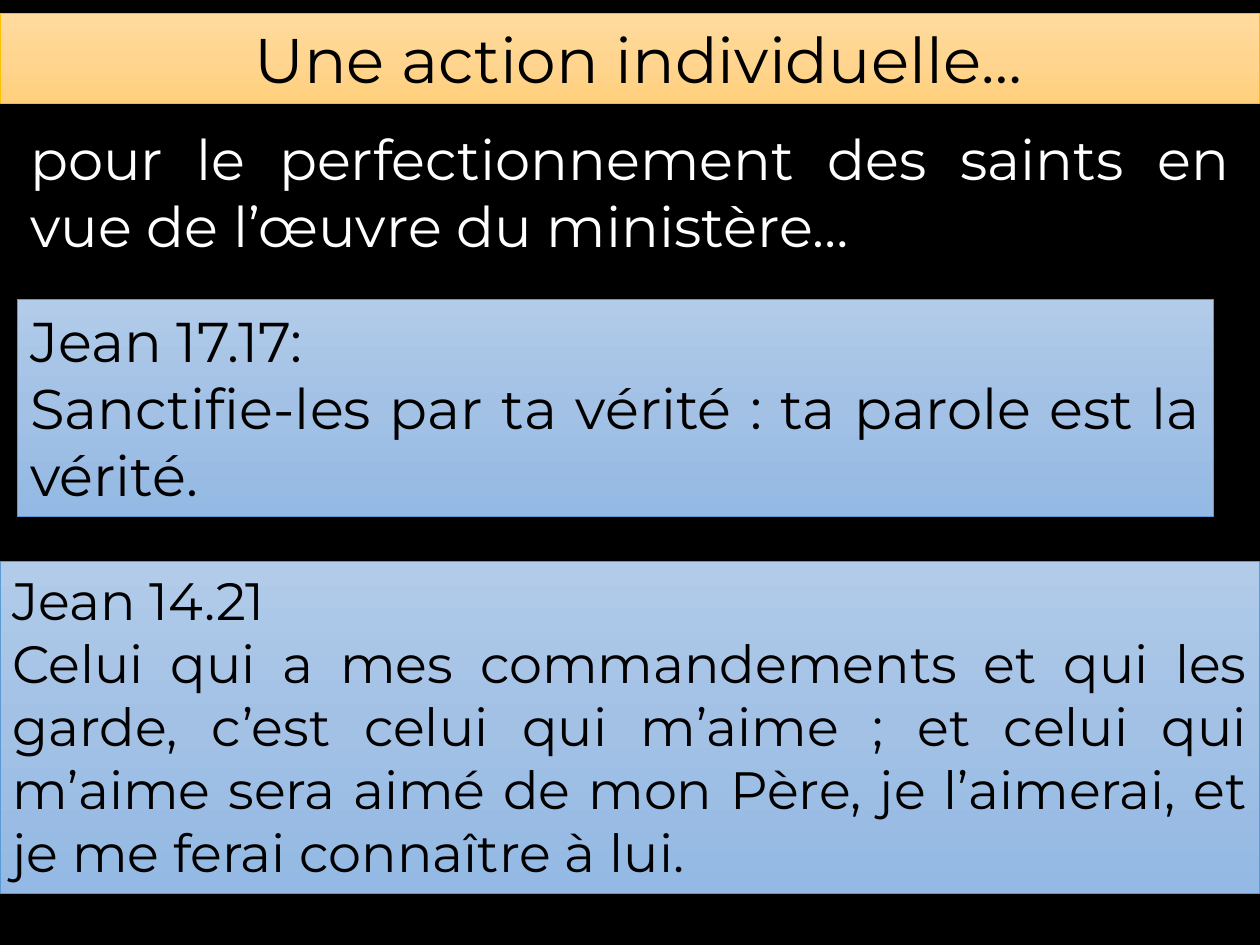
from copy import deepcopy
from dataclasses import dataclass

from pptx import Presentation
from pptx.dml.color import RGBColor as Rgb
from pptx.enum.shapes import MSO_SHAPE as Shape
from pptx.enum.text import MSO_ANCHOR as Anchor
from pptx.enum.text import MSO_AUTO_SIZE as AutoSize
from pptx.enum.text import PP_ALIGN as Align
from pptx.util import Inches, Pt


@dataclass(frozen=True)
class Theme:
    font: str = "Montserrat"
    background: str = "000000"
    dark_text: str = "000000"
    light_text: str = "FFFFFF"
    gold: tuple = ("FFDB9E", "FFD590", "FFD07C")
    gold_line: str = "FFC000"
    blue: tuple = ("B1CBE9", "A3C1E5", "93B9E4")
    blue_line: str = "5B9BD5"
    title_size: int = 36
    body_size: int = 32
    verse_size: int = 30
    line_width: float = 0.5


def write_text(shape, *lines, font, size, color, align=Align.JUSTIFY):
    """Fill a shape with one paragraph per line."""
    frame = shape.text_frame
    frame.word_wrap = True
    frame.auto_size = AutoSize.SHAPE_TO_FIT_TEXT
    frame.vertical_anchor = Anchor.TOP
    for index, line in enumerate(lines):
        paragraph = frame.add_paragraph() if index else frame.paragraphs[0]
        paragraph.alignment = align
        run = paragraph.add_run()
        run.text = line
        run.font.name = font
        run.font.size = Pt(size)
        run.font.color.rgb = Rgb.from_string(color)


class SlideBuilder:
    """Places elements by inches on a 10 by 7.5 grid."""

    def __init__(self, presentation, theme):
        self.theme = theme
        self.slide = presentation.slides.add_slide(presentation.slide_layouts[6])
        fill = self.slide.background.fill
        fill.solid()
        fill.fore_color.rgb = Rgb.from_string(theme.background)

    def text(self, box, *lines, size, color):
        shape = self.slide.shapes.add_textbox(*map(Inches, box))
        write_text(shape, *lines, font=self.theme.font, size=size, color=color)

    def panel(self, box, *lines, size, colors, line_color, align=Align.JUSTIFY):
        shape = self.slide.shapes.add_shape(Shape.RECTANGLE, *map(Inches, box))
        shape.shadow.inherit = False
        self.shade(shape.fill, shape, colors)
        shape.line.color.rgb = Rgb.from_string(line_color)
        shape.line.width = Pt(self.theme.line_width)
        write_text(shape, *lines, font=self.theme.font, size=size,
                   color=self.theme.dark_text, align=align)

    def shade(self, fill, shape, colors):
        """Apply a top-to-bottom gradient with evenly spaced stops."""
        fill.gradient()
        fill.gradient_angle = 270
        # A new gradient has two stops; add one between them
        first = shape._element.spPr.xpath("./a:gradFill/a:gsLst/a:gs")[0]
        first.addnext(deepcopy(first))
        for index, (stop, color) in enumerate(zip(fill.gradient_stops, colors)):
            stop.position = index / (len(colors) - 1)
            stop.color.rgb = Rgb.from_string(color)


def main():
    theme = Theme()
    presentation = Presentation()
    presentation.slide_width, presentation.slide_height = Inches(10), Inches(7.5)
    builder = SlideBuilder(presentation, theme)
    verse_style = {"colors": theme.blue, "line_color": theme.blue_line}

    # Title band
    builder.panel((0, 0.11, 10, 0.71), " Une action individuelle…",
                  size=theme.title_size, colors=theme.gold,
                  line_color=theme.gold_line, align=Align.CENTER)

    # Introduction
    builder.text((0.14, 0.94, 9.72, 1.18),
                 "pour le perfectionnement des saints en vue de l’œuvre du ministère…",
                 size=theme.body_size, color=theme.light_text)

    # Bible verses
    builder.panel((0.14, 2.38, 9.49, 1.72), "Jean 17.17:",
                  "Sanctifie-les par ta vérité : ta parole est la vérité.",
                  size=theme.body_size, **verse_style)
    builder.panel((0, 4.46, 10, 2.63), "Jean 14.21",
                  "Celui qui a mes commandements et qui les garde, c’est celui qui "
                  "m’aime ; et celui qui m’aime sera aimé de mon Père, je l’aimerai, "
                  "et je me ferai connaître à lui.",
                  size=theme.verse_size, **verse_style)

    presentation.save("out.pptx")


if __name__ == "__main__":
    main()
